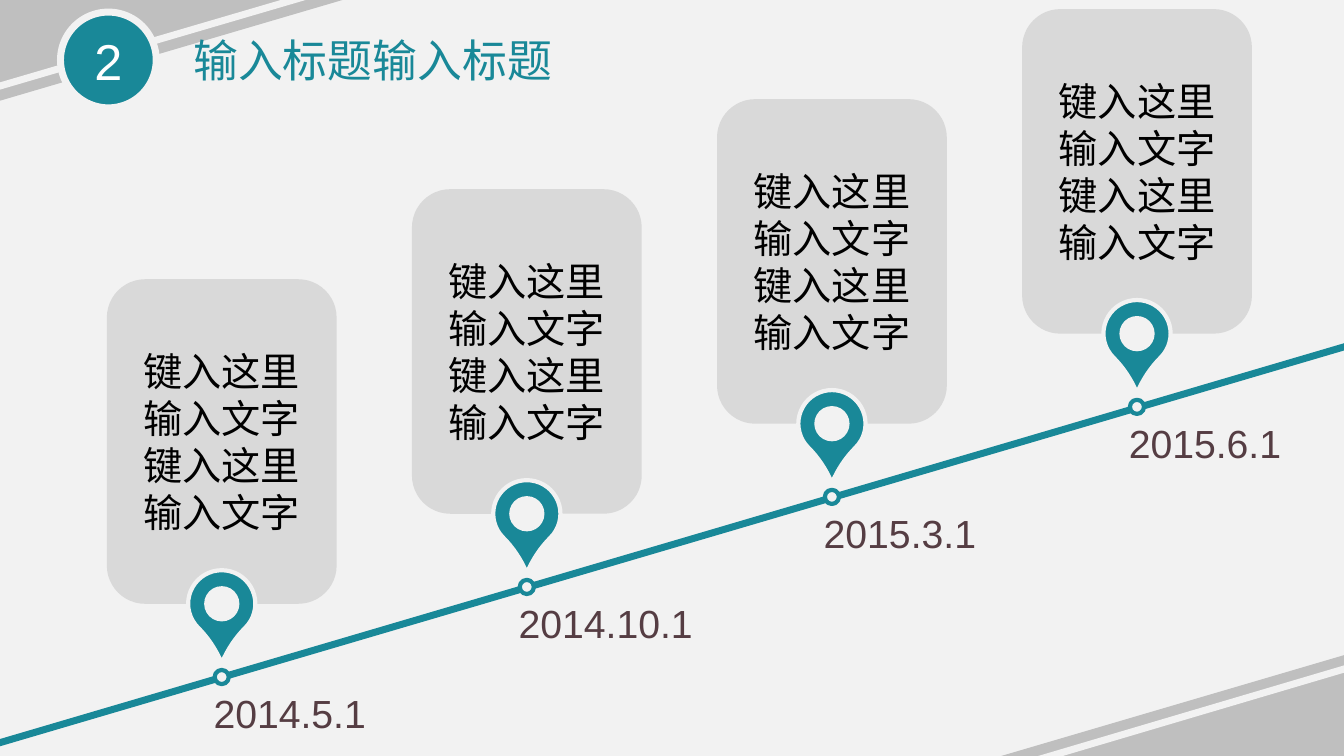
from dataclasses import dataclass

from pptx import Presentation
from pptx import util as u
from pptx.dml.color import RGBColor
from pptx.enum import shapes, text
from pptx.oxml.ns import qn
from lxml import etree

COLUMNS, ROWS = 40, 22.5
CELL = u.Inches(1) / 3
PRESET = shapes.MSO_SHAPE


@dataclass(frozen=True)
class Theme:
    paper: str = "F2F2F2"
    teal: str = "198898"
    corner: str = "BFBFBF"
    card: str = "D9D9D9"
    date: str = "553D43"
    black: str = "000000"
    white: str = "FFFFFF"
    latin: str = "Arial"
    body: str = "Calibri"
    number_size: int = 36
    title_size: int = 32
    text_size: int = 28
    stripe: int = 5
    ring: int = 3


THEME = Theme()
DATES = ["2014.5.1", "2014.10.1", "2015.3.1", "2015.6.1"]
CARD_TEXT = "键入这里输入文字键入这里输入文字"
FIRST_X, FIRST_Y = 6.6, 17.97
STEP_X, STEP_Y = 9.08, -2.68
CARD_WIDTH, CARD_HEIGHT = 6.84, 9.66


def cells(*lengths):
    return [round(length * CELL) for length in lengths]


def rgb(value):
    return RGBColor.from_string(value)


def write(holder, content, *, size, color, font, align=text.PP_ALIGN.LEFT,
          anchor=text.MSO_ANCHOR.TOP):
    frame = holder.text_frame
    frame.word_wrap = True
    frame.vertical_anchor = anchor
    line = frame.paragraphs[0]
    line.alignment = align
    words = line.add_run()
    words.text = content
    words.font.size = u.Pt(size)
    words.font.name = font
    words.font.color.rgb = rgb(color)


def add_label(parent, content, box, **style):
    label = parent.add_textbox(*cells(*box))
    write(label, content, **style)
    label.text_frame.auto_size = text.MSO_AUTO_SIZE.SHAPE_TO_FIT_TEXT


def add_figure(parent, preset, box, fill, *, outline=None, width=0, rotation=0):
    figure = parent.add_shape(preset, *cells(*box))
    figure.shadow.inherit = False
    figure.fill.solid()
    figure.fill.fore_color.rgb = rgb(fill)
    figure.rotation = rotation
    if outline:
        figure.line.color.rgb = rgb(outline)
        figure.line.width = u.Pt(width)
    else:
        figure.line.fill.background()
    return figure


def add_round(parent, preset, center_x, center_y, size, fill, **style):
    box = (center_x - size / 2, center_y - size / 2, size, size)
    return add_figure(parent, preset, box, fill, **style)


def add_stripe(parent, start, end, color):
    stripe = parent.add_connector(shapes.MSO_CONNECTOR.STRAIGHT, *cells(*start, *end))
    stripe.line.color.rgb = rgb(color)
    stripe.line.width = u.Pt(THEME.stripe)
    etree.SubElement(stripe._element.spPr, qn("a:effectLst"))


def add_corner(parent, left, top, rotation, start, end):
    corner = add_figure(parent, PRESET.RIGHT_TRIANGLE, (left, top, 10.2, 3),
                        THEME.corner, rotation=rotation)
    corner._element.spPr.xfrm.set("flipV", "1")
    add_stripe(parent, start, end, THEME.paper)


def add_milestone(parent, index, date):
    x, y = FIRST_X + index * STEP_X, FIRST_Y + index * STEP_Y
    marker = parent.add_group_shape().shapes
    card = add_figure(marker, PRESET.ROUNDED_RECTANGLE,
                      (x - CARD_WIDTH / 2, y - CARD_HEIGHT, CARD_WIDTH, CARD_HEIGHT),
                      THEME.card)
    write(card, CARD_TEXT, size=THEME.text_size, color=THEME.black, font=THEME.body,
          align=text.PP_ALIGN.CENTER, anchor=text.MSO_ANCHOR.MIDDLE)
    pin = add_round(marker, PRESET.TEAR, x, y, 2, THEME.teal,
                    outline=THEME.paper, width=THEME.ring, rotation=135)
    pin.adjustments[0] = 1.25
    add_round(marker, PRESET.OVAL, x, y, 1.05, THEME.paper)
    add_round(marker, PRESET.OVAL, x, y + 2.18, 0.42, THEME.paper,
              outline=THEME.teal, width=THEME.ring)
    add_label(parent, date, (x - 0.54, y + 2.4, 7.98, 1.71),
              size=THEME.text_size, color=THEME.date, font=THEME.latin)


def add_heading(parent):
    badge = add_figure(parent, PRESET.OVAL, (1.8, 0.36, 2.85, 2.85), THEME.teal,
                       outline=THEME.paper, width=THEME.stripe)
    write(badge, "2", size=THEME.number_size, color=THEME.white, font=THEME.latin,
          align=text.PP_ALIGN.CENTER, anchor=text.MSO_ANCHOR.MIDDLE)
    add_label(parent, "输入标题输入标题", (5.46, 0.84, 17.07, 1.92),
              size=THEME.title_size, color=THEME.teal, font=THEME.body)


def main():
    deck = Presentation()
    deck.slide_width, deck.slide_height = cells(COLUMNS, ROWS)
    slide = deck.slides.add_slide(deck.slide_layouts[6])
    slide.background.fill.solid()
    slide.background.fill.fore_color.rgb = rgb(THEME.paper)
    canvas = slide.shapes

    add_corner(canvas, 0, 0, 0, (13.53, -1.41), (-0.48, 2.7))
    add_corner(canvas, COLUMNS - 10.2, ROWS - 3, 180, (29.34, 23.07), (43.32, 18.93))
    add_heading(canvas)
    add_stripe(canvas, (41.34, 9.93), (-1.35, ROWS), THEME.teal)
    for index, date in enumerate(DATES):
        add_milestone(canvas, index, date)

    deck.save("out.pptx")


if __name__ == "__main__":
    main()
